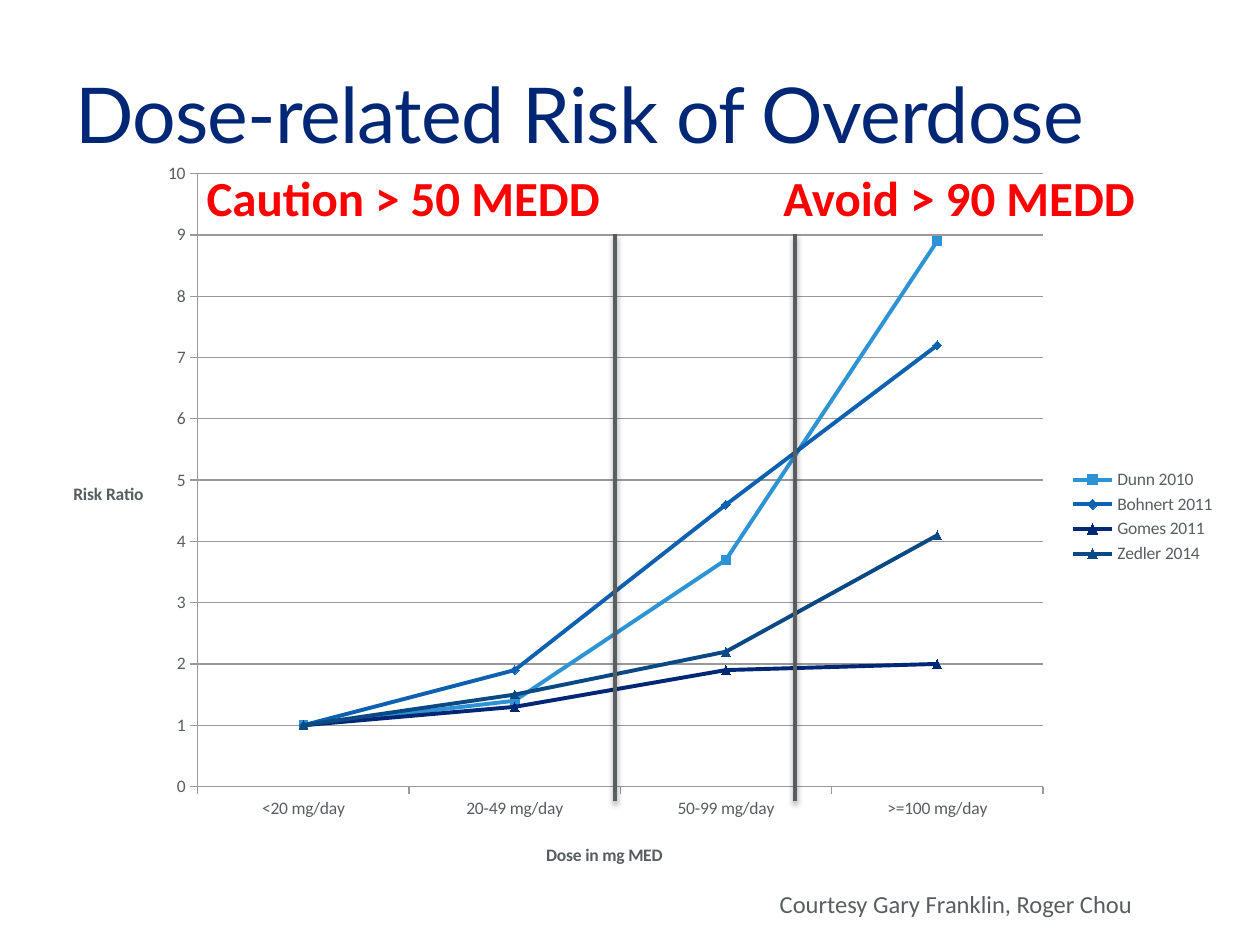
import pptx
import pptx.chart.data
import pptx.dml.color
import pptx.enum.chart
import pptx.enum.shapes
import pptx.enum.text
import pptx.oxml
import pptx.oxml.ns
import pptx.util
from pptx.util import Pt

MARKER = pptx.enum.chart.XL_MARKER_STYLE
TICK = pptx.enum.chart.XL_TICK_MARK
qn = pptx.oxml.ns.qn

# Content
COLORS = {"title": "002776", "text": "585E60", "alert": "FF0000", "grid": "999999"}
TITLE = "Dose-related Risk of Overdose"
CREDIT = "Courtesy Gary Franklin, Roger Chou"
DOSES = ["<20 mg/day", "20-49 mg/day", "50-99 mg/day", ">=100 mg/day"]
STUDIES = [  # name, risk ratios, colour, marker, rotated marker sign
    ("Dunn 2010", (1, 1.4, 3.7, 8.9), "2E93D5", MARKER.SQUARE),
    ("Bohnert 2011", (1, 1.9, 4.6, 7.2), "0E61B0", MARKER.DIAMOND),
    ("Gomes 2011", (1, 1.3, 1.9, 2), "002776", MARKER.TRIANGLE),
    ("Zedler 2014", (1, 1.5, 2.2, 4.1), "0B4984", MARKER.TRIANGLE),
]
THRESHOLDS = [  # text, text left, text width, line x
    ("Caution > 50 MEDD", 111, 296, 351.4),
    ("Avoid > 90 MEDD", 440.6, 261.4, 454.3),
]
LINE_TOP, LINE_BOTTOM = 134, 458
CHART_BOX = (26.6, 85, 675.4, 420.5)
SHADOW = (
    '<a:effectLst xmlns:a="http://schemas.openxmlformats.org/drawingml/2006/main">'
    '<a:outerShdw blurRad="39370" dist="20320" dir="5400000" rotWithShape="0">'
    '<a:srgbClr val="000000"><a:alpha val="38000"/></a:srgbClr>'
    "</a:outerShdw></a:effectLst>"
)


def rgb(value):
    return pptx.dml.color.RGBColor.from_string(value)


def add_text(slide, text, box, size, color, font="Calibri", bold=False):
    tf = slide.shapes.add_textbox(*map(Pt, box)).text_frame
    tf.word_wrap = True
    p = tf.paragraphs[0]
    p.text = text
    p.font.name, p.font.size, p.font.bold = font, Pt(size), bold
    p.font.color.rgb = rgb(color)
    return tf


def place(element, index, inner=False, **fractions):
    """Give a chart part a fixed place, in fractions of the chart."""
    for old in element.findall(qn("c:layout")):
        element.remove(old)
    tags = {"layoutTarget": "inner"} if inner else {}
    tags.update(xMode="edge", yMode="edge", **fractions)
    body = "".join(f'<c:{tag} val="{val}"/>' for tag, val in tags.items())
    element.insert(index, pptx.oxml.parse_xml(
        '<c:layout xmlns:c="http://schemas.openxmlformats.org/drawingml/2006/chart">'
        f"<c:manualLayout>{body}</c:manualLayout></c:layout>"))


def style_axis(axis, title, x, y):
    axis.major_tick_mark, axis.minor_tick_mark = TICK.OUTSIDE, TICK.NONE
    axis.format.line.color.rgb = rgb(COLORS["grid"])
    axis.format.line.width = Pt(0.75)
    tf = axis.axis_title.text_frame
    tf._txBody.bodyPr.set("rot", "0")
    p = tf.paragraphs[0]
    p.text = title
    p.font.name, p.font.size, p.font.bold = "Calibri", Pt(10), True
    p.font.color.rgb = rgb(COLORS["text"])
    place(axis.axis_title._element, 1, x=x, y=y)


def add_risk_chart(slide):
    data = pptx.chart.data.CategoryChartData()
    data.categories = DOSES
    for name, ratios, *_ in STUDIES:
        data.add_series(name, ratios)
    chart = slide.shapes.add_chart(
        pptx.enum.chart.XL_CHART_TYPE.LINE_MARKERS, *map(Pt, CHART_BOX), data).chart
    chart.has_title = False
    chart.font.name, chart.font.size = "Calibri", Pt(10)
    chart.font.color.rgb = rgb(COLORS["text"])
    chart.has_legend = True
    chart.legend.position = pptx.enum.chart.XL_LEGEND_POSITION.RIGHT
    chart.legend.include_in_layout = False

    # Axes and plot area
    axis = chart.value_axis
    axis.minimum_scale, axis.maximum_scale, axis.major_unit = 0, 10, 1
    axis.tick_labels.number_format = "General"
    axis.tick_labels.number_format_is_linked = False
    axis.has_major_gridlines = True
    axis.major_gridlines.format.line.color.rgb = rgb(COLORS["grid"])
    axis.major_gridlines.format.line.width = Pt(0.75)
    style_axis(axis, "Risk Ratio", 0.02, 0.45)
    style_axis(chart.category_axis, "Dose in mg MED", 0.42, 0.94)
    plot_area = chart._chartSpace.chart.plotArea
    place(plot_area, 0, inner=True, x=0.128, y=0.034, w=0.715, h=0.833)

    # Series
    chart.plots[0].vary_by_categories = False
    for series, (_, _, color, marker) in zip(chart.plots[0].series, STUDIES):
        series.smooth = False
        series.format.line.color.rgb = rgb(color)
        series.format.line.width = Pt(2.25)
        series.marker.style, series.marker.size = marker, 5
        series.marker.format.fill.solid()
        series.marker.format.fill.fore_color.rgb = rgb(color)
        series.marker.format.line.color.rgb = rgb(color)


def main():
    prs = pptx.Presentation()
    prs.slide_width, prs.slide_height = Pt(720), Pt(540)
    s = prs.slides.add_slide(prs.slide_layouts[6])

    # Title
    tf = add_text(s, TITLE, (36, 11.5, 648, 114.5), 44, COLORS["title"], "Lato")
    tf.vertical_anchor = pptx.enum.text.MSO_ANCHOR.MIDDLE
    tf.paragraphs[0].line_spacing = 0.85
    tf.paragraphs[0].runs[0]._r.get_or_add_rPr().set("spc", "-50")

    add_risk_chart(s)
    add_text(s, CREDIT, (438.5, 504.7, 263.5, 24.5), 14, COLORS["text"])

    # Dose thresholds
    for text, left, width, x in THRESHOLDS:
        line = s.shapes.add_connector(
            pptx.enum.shapes.MSO_CONNECTOR.STRAIGHT,
            Pt(x), Pt(LINE_BOTTOM), Pt(x), Pt(LINE_TOP))
        line.line.color.rgb = rgb(COLORS["text"])
        line.line.width = Pt(2)
        line._element.spPr.append(pptx.oxml.parse_xml(SHADOW))
        add_text(s, text, (left, 92.2, width, 41), 28, COLORS["alert"], bold=True)

    prs.save("out.pptx")


if __name__ == "__main__":
    main()
